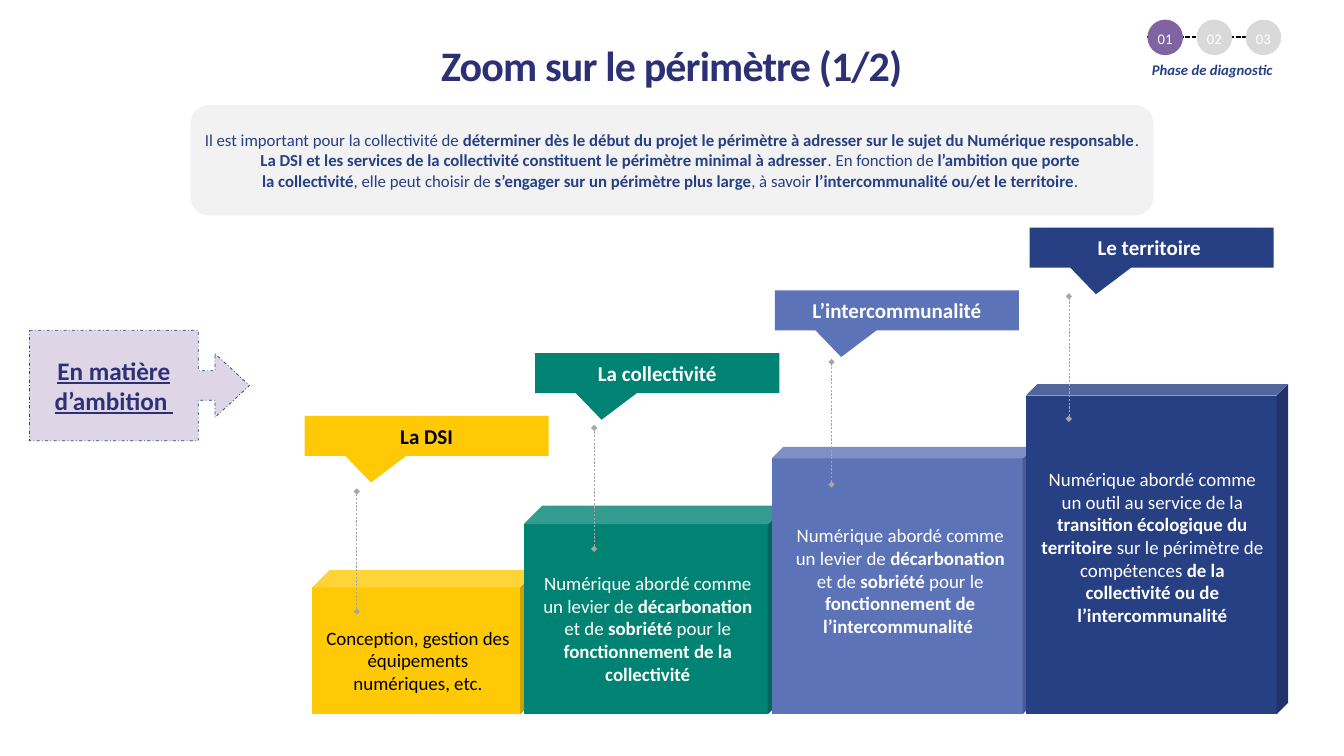
from lxml import etree
from pptx import Presentation
from pptx.dml.color import RGBColor
from pptx.enum.dml import MSO_LINE
from pptx.enum.shapes import MSO_CONNECTOR, MSO_SHAPE
from pptx.enum.text import MSO_ANCHOR, PP_ALIGN
from pptx.oxml.ns import qn
from pptx.util import Inches, Pt

BLACK = RGBColor(0x00, 0x00, 0x00)
WHITE = RGBColor(0xFF, 0xFF, 0xFF)
YELLOW = RGBColor(0xFF, 0xCA, 0x05)
GREEN = RGBColor(0x00, 0x83, 0x73)
BLUE = RGBColor(0x5D, 0x73, 0xB7)
NAVY = RGBColor(0x27, 0x40, 0x84)
INK = RGBColor(0x2C, 0x31, 0x76)
OUTLINE = RGBColor(0x1F, 0x49, 0x7D)
PURPLE = RGBColor(0x80, 0x64, 0xA2)
GRAY = RGBColor(0xA6, 0xA6, 0xA6)
MID_GRAY = RGBColor(0xD9, 0xD9, 0xD9)
PALE_GRAY = RGBColor(0xF2, 0xF2, 0xF2)

FONT = "Calibri"
TITLE = "Zoom sur le périmètre (1/2)"
PHASE = "Phase de diagnostic "
AMBITION = "En matière d’ambition "
INTRO = (
    "Il est important pour la collectivité de **déterminer dès le début du projet "
    "le périmètre à adresser sur le sujet du Numérique responsable**. "
    "**La DSI et les services de la collectivité constituent le périmètre minimal "
    "à adresser**. En fonction de **l’ambition que porte \nla collectivité**, elle "
    "peut choisir de **s’engager sur un périmètre plus large**, à savoir "
    "**l’intercommunalité ou/et le territoire**. "
)
LEVER = ("Numérique abordé comme un levier de **décarbonation **et de **sobriété **"
         "pour le **fonctionnement de ")
STEPS = [
    dict(label="La DSI", fill=YELLOW, color=BLACK, cube=(4.13, 7.54, 2.98), depth=0.12,
         callout_x=4.03, pin=(4.72, 6.5, 8.09), box=(4.16, 8.18, 2.74, 1.11),
         text="Conception, gestion des équipements numériques, etc."),
    dict(label="La collectivité", fill=GREEN, color=WHITE, cube=(6.93, 6.69, 3.47), depth=0.088,
         callout_x=7.08, pin=(7.86, 5.66, 7.26), box=(6.97, 7.25, 3.2, 2.12),
         text=LEVER + "la collectivité**"),
    dict(label="L’intercommunalité", fill=BLUE, color=WHITE, cube=(10.21, 5.91, 3.47), depth=0.044,
         callout_x=10.25, pin=(11, 4.79, 6.41), box=(10.31, 6.62, 3.2, 2.12),
         text=LEVER + "l’intercommunalité **"),
    dict(label="Le territoire ", fill=NAVY, color=WHITE, cube=(13.57, 5.08, 3.47), depth=0.044,
         callout_x=13.62, pin=(14.14, 3.92, 5.54), box=(13.65, 5.67, 3.19, 3.13),
         text="Numérique abordé comme un outil au service de la **transition écologique "
              "du territoire** sur le périmètre de compétences **de la collectivité ou "
              "de l’intercommunalité**"),
]
FLOOR = 9.45
CALLOUT_TOP, CALLOUT_RISE = 5.5, 0.83
PHASES = [("01", PURPLE), ("02", MID_GRAY), ("03", MID_GRAY)]
PHASE_X, PHASE_STEP, PHASE_SIZE = 15.18, 0.65, 0.47


def inches(*values):
    return [Inches(v) for v in values]


def add_shape(kind, box, fill, adjustments=()):
    sp = shapes.add_shape(kind, *inches(*box))
    sp.shadow.inherit = False
    sp.fill.solid()
    sp.fill.fore_color.rgb = fill
    sp.line.fill.background()
    for i, value in enumerate(adjustments):
        sp.adjustments[i] = value
    return sp


def write(sp, text, size, color, bold=None, anchor=MSO_ANCHOR.MIDDLE):
    tf = sp.text_frame
    tf.word_wrap = True
    tf.vertical_anchor = anchor
    p = tf.paragraphs[0]
    p.alignment = PP_ALIGN.CENTER
    p.font.name, p.font.size, p.font.color.rgb = FONT, Pt(size), color
    p.font.bold = bold
    for i, piece in enumerate(text.split("**")):
        for j, line in enumerate(piece.split("\n")):
            if j:
                p.add_line_break()
            if line:
                r = p.add_run()
                r.text = line
                if i % 2:
                    r.font.bold = True
    return p


def add_text(box, *args, **kwargs):
    return write(shapes.add_textbox(*inches(*box)), *args, **kwargs)


def add_line(x1, y1, x2, y2, color, width, dash, ends=None):
    line = shapes.add_connector(MSO_CONNECTOR.STRAIGHT, *inches(x1, y1, x2, y2))
    line.line.color.rgb = color
    line.line.width = Pt(width)
    line.line.dash_style = dash
    if ends:
        ln = line.line._get_or_add_ln()
        for tag in ("a:headEnd", "a:tailEnd"):
            etree.SubElement(ln, qn(tag), type=ends)
    etree.SubElement(line._element.spPr, qn("a:effectLst"))


prs = Presentation()
prs.slide_width, prs.slide_height = inches(17.78, 10)
s = prs.slides.add_slide(prs.slide_layouts[5])
shapes = s.shapes

title = shapes.title
title.left, title.top, title.width, title.height = inches(1.09, 0.52, 15.59, 0.67)
tf = title.text_frame
tf.margin_left = tf.margin_top = tf.margin_right = tf.margin_bottom = 0
p = write(title, TITLE, 40, INK, True, MSO_ANCHOR.TOP)
p.runs[0].font._element.set("spc", "-80")

for step in STEPS:
    x, y, w = step["cube"]
    add_shape(MSO_SHAPE.CUBE, (x, y, w, FLOOR - y), step["fill"], [step["depth"]])

for i, step in enumerate(STEPS):
    x, top, bottom = step["pin"]
    add_line(x, bottom, x, top, GRAY, 0.5, MSO_LINE.DASH, "diamond")
    box = (step["callout_x"], CALLOUT_TOP - i * CALLOUT_RISE, 3.23, 0.53)
    sp = add_shape(MSO_SHAPE.RECTANGULAR_CALLOUT, box, step["fill"], [-0.228, 1.165])
    tf = sp.text_frame
    tf.margin_left = tf.margin_right = Inches(0.13)
    tf.margin_top = tf.margin_bottom = Inches(0.07)
    write(sp, step["label"], 20, step["color"], True)
    add_text(step["box"], step["text"], 18, step["color"])

sp = add_shape(MSO_SHAPE.RIGHT_ARROW_CALLOUT, (0.39, 4.37, 2.91, 1.46), PURPLE,
               [0.267, 0.29, 0.313, 0.767])
tint = sp._element.spPr.find(qn("a:solidFill"))[0]
etree.SubElement(tint, qn("a:alpha"), val="26000")
sp.line.color.rgb = OUTLINE
sp.line.width = Pt(0.75)
sp.line.dash_style = MSO_LINE.DASH_DOT
write(sp, AMBITION, 24, INK, True).font.underline = True

sp = add_shape(MSO_SHAPE.FLOWCHART_ALTERNATE_PROCESS, (2.52, 1.39, 12.74, 1.46), PALE_GRAY)
write(sp, INTRO, 16, NAVY)

p = add_text((14.85, 0.76, 2.42, 0.34), PHASE, 14, NAVY, True, MSO_ANCHOR.TOP)
p.font.italic = True
add_line(PHASE_X, 0.49, 16.93, 0.49, BLACK, 1.5, MSO_LINE.SQUARE_DOT)
for i, (number, fill) in enumerate(PHASES):
    x = PHASE_X + i * PHASE_STEP
    add_shape(MSO_SHAPE.OVAL, (x, 0.26, PHASE_SIZE, PHASE_SIZE), fill)
    p = add_text((x, 0.22, PHASE_SIZE, 0.44), number, 14, WHITE)
    p.line_spacing = Pt(26.7)

prs.save("out.pptx")
